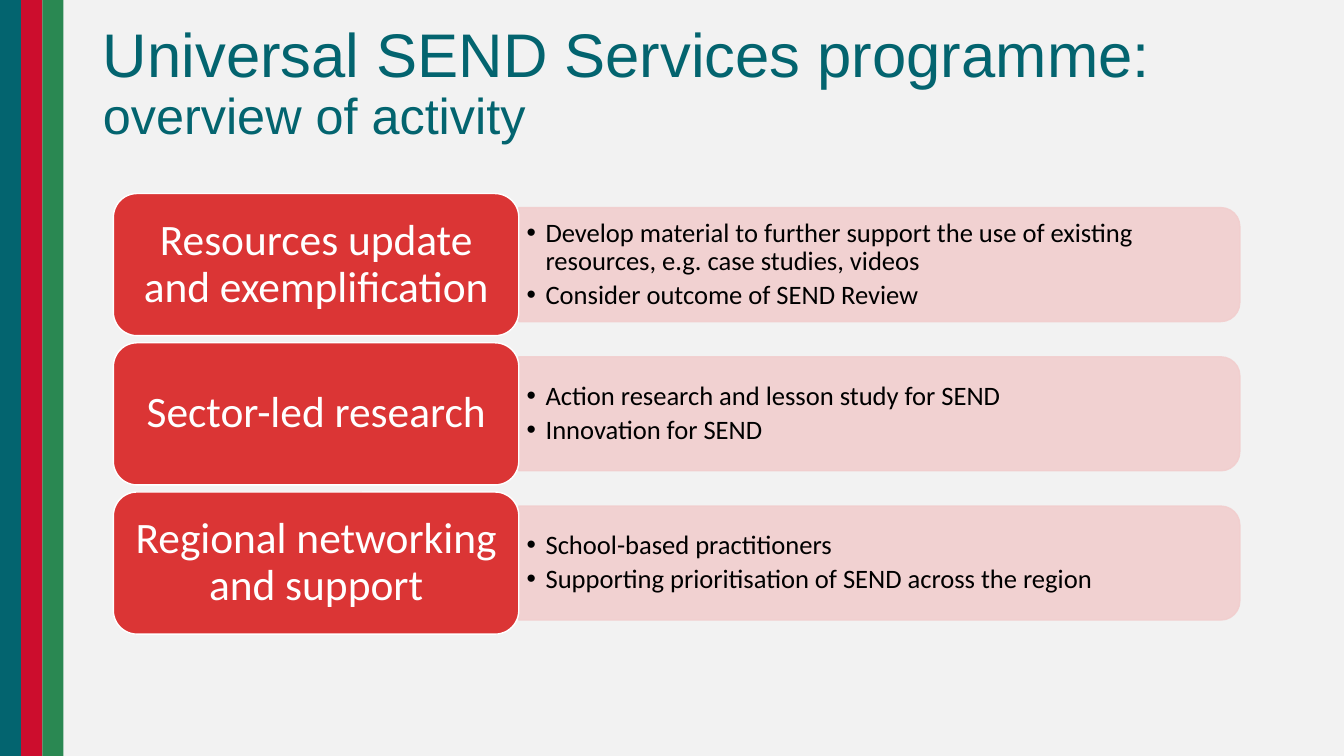
from dataclasses import dataclass
from lxml.etree import SubElement
from pptx import Presentation
from pptx.dml.color import RGBColor
from pptx.enum.shapes import MSO_SHAPE
from pptx.enum.text import MSO_ANCHOR, MSO_AUTO_SIZE, PP_ALIGN
from pptx.oxml.ns import qn
from pptx.util import Pt


@dataclass(frozen=True)
class Theme:
    back: str = "F2F2F2"
    teal: str = "03646F"
    red: str = "CC0D2D"
    green: str = "2A8852"
    label: str = "DB3535"
    panel: str = "F1CECE"
    white: str = "FFFFFF"
    black: str = "000000"
    head: str = "Arial"
    body: str = "Calibri"
    title: int = 44
    sub: int = 36
    large: int = 31
    small: int = 19


ROWS = [
    ("Resources update and exemplification",
     ["Develop material to further support the use of existing resources, "
      "e.g. case studies, videos",
      "Consider outcome of SEND Review"]),
    ("Sector-led research",
     ["Action research and lesson study for SEND", "Innovation for SEND"]),
    ("Regional networking and support",
     ["School-based practitioners",
      "Supporting prioritisation of SEND across the region"]),
]


class Deck:
    def __init__(self, slide, theme):
        self.slide, self.theme = slide, theme
        fill = slide.background.fill
        fill.solid()
        fill.fore_color.rgb = RGBColor.from_string(theme.back)

    def frame(self, shape, side=7.2, edge=3.6):
        """Prepare a shape's text frame with middle anchor and insets."""
        frame = shape.text_frame
        frame.word_wrap = True
        frame.auto_size = MSO_AUTO_SIZE.NONE
        frame.vertical_anchor = MSO_ANCHOR.MIDDLE
        frame.margin_left = frame.margin_right = Pt(side)
        frame.margin_top = frame.margin_bottom = Pt(edge)
        return frame

    def run(self, para, text, size, color, font):
        run = para.add_run()
        run.text = text
        run.font.size = Pt(size)
        run.font.name = font
        run.font.color.rgb = RGBColor.from_string(color)

    def shape(self, kind, left, top, width, height, color, line=None):
        shape = self.slide.shapes.add_shape(
            kind, Pt(left), Pt(top), Pt(width), Pt(height))
        shape.shadow.inherit = False
        shape.fill.solid()
        shape.fill.fore_color.rgb = RGBColor.from_string(color)
        if line:
            shape.line.color.rgb = RGBColor.from_string(line)
            shape.line.width = Pt(1)
        else:
            shape.line.fill.background()
        return shape

    def title(self, main, sub):
        look = self.theme
        shape = self.slide.shapes.title
        shape.left, shape.top = Pt(66.24), Pt(8.64)
        shape.width, shape.height = Pt(828), Pt(104.4)
        para = self.frame(shape).paragraphs[0]
        para.alignment = PP_ALIGN.LEFT
        para.line_spacing = 0.9
        self.run(para, main, look.title, look.teal, look.head)
        self.run(para, sub, look.sub, look.teal, look.head)

    def panel(self, left, mid, width, height):
        """Draw a pale panel, rounded on its right side, centred on mid."""
        pale = self.theme.panel
        shape = self.shape(
            MSO_SHAPE.ROUND_2_SAME_RECTANGLE, left + (width - height) / 2,
            mid - width / 2, height, width, pale, pale)
        shape.rotation = 90
        for color in shape.element.spPr.iter(qn("a:srgbClr")):
            SubElement(color, qn("a:alpha"), val="90000")

    def label(self, text, left, mid, width, height):
        look = self.theme
        shape = self.shape(MSO_SHAPE.ROUNDED_RECTANGLE, left, mid - height / 2,
                           width, height, look.label, look.white)
        para = self.frame(shape, 9.3, 4.65).paragraphs[0]
        para.alignment = PP_ALIGN.CENTER
        para.line_spacing = 0.9
        self.run(para, text, look.large, look.white, look.body)

    def bullets(self, items, left, mid, width, height):
        look = self.theme
        box = self.slide.shapes.add_textbox(
            Pt(left), Pt(mid - height / 2), Pt(width), Pt(height))
        frame = self.frame(box, 5.6, 2.8)
        for index, item in enumerate(items):
            para = frame.add_paragraph() if index else frame.paragraphs[0]
            props = para._p.get_or_add_pPr()
            props.set("marL", str(Pt(13.5)))
            props.set("indent", str(-Pt(13.5)))
            SubElement(props, qn("a:buFont"), typeface="Arial")
            SubElement(props, qn("a:buChar"), char="•")
            para.line_spacing = 0.9
            para.space_after = Pt(3.4)
            self.run(para, item, look.small, look.black, look.body)


def main():
    show = Presentation()
    show.slide_width, show.slide_height = Pt(960), Pt(540)
    look = Theme()
    deck = Deck(show.slides.add_slide(show.slide_layouts[5]), look)

    bar = 15.12
    for index, color in enumerate((look.teal, look.red, look.green)):
        deck.shape(MSO_SHAPE.RECTANGLE, index * bar, 0, bar, 540, color)
    deck.title("Universal SEND Services programme: ", "overview of activity")

    left, width = 81, 289.6
    split = left + width
    for index, (name, items) in enumerate(ROWS):
        mid = 189 + index * 106.6
        deck.panel(split, mid, 515, 81.4)
        deck.bullets(items, split, mid, 511, 73.4)
        deck.label(name, left, mid, width, 101.5)
    show.save("out.pptx")


if __name__ == "__main__":
    main()
